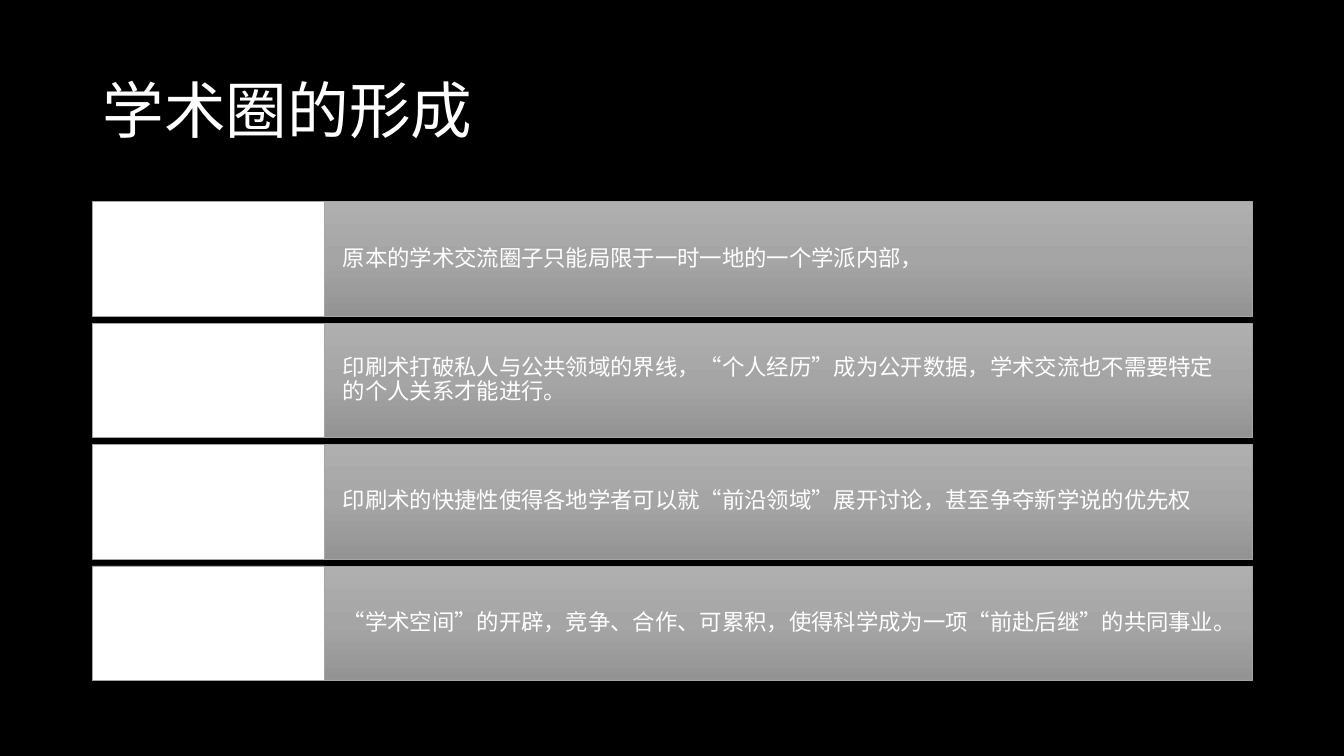
from copy import deepcopy

from lxml.etree import SubElement
from pptx import Presentation
from pptx.dml.color import RGBColor
from pptx.enum.shapes import MSO_SHAPE
from pptx.enum.text import MSO_ANCHOR, PP_ALIGN
from pptx.oxml.ns import qn
from pptx.util import Inches, Pt

COLORS = {
    "background": "000000",
    "text": "FFFFFF",
    "label": "FFFFFF",
    "outline": "A5A5A5",
    "panel_top": "AFAFAF",
    "panel_middle": "A5A5A5",
    "panel_bottom": "939393",
}
FONT = "Noto Sans CJK SC"
TITLE = "学术圈的形成"
STAGES = [
    "原本的学术交流圈子只能局限于一时一地的一个学派内部，",
    "印刷术打破私人与公共领域的界线，“个人经历”成为公开数据，学术交流也不需要特定的个人关系才能进行。",
    "印刷术的快捷性使得各地学者可以就“前沿领域”展开讨论，甚至争夺新学说的优先权",
    "“学术空间”的开辟，竞争、合作、可累积，使得科学成为一项“前赴后继”的共同事业。",
]


def color(name):
    """Return the palette colour of the given name."""
    return RGBColor.from_string(COLORS[name])


def write_text(frame, text, size, inset_x, inset_y):
    """Fill a text frame with one left-aligned, vertically centred paragraph."""
    frame.word_wrap = True
    frame.vertical_anchor = MSO_ANCHOR.MIDDLE
    frame.margin_left = frame.margin_right = Inches(inset_x)
    frame.margin_top = frame.margin_bottom = Inches(inset_y)
    paragraph = frame.paragraphs[0]
    paragraph.text = text
    paragraph.alignment = PP_ALIGN.LEFT
    paragraph.line_spacing = 0.9
    font = paragraph.font
    font.size = Pt(size)
    font.color.rgb = color("text")
    font.name = FONT
    defaults = paragraph._p.pPr.find(qn("a:defRPr"))
    SubElement(defaults, qn("a:ea"), typeface=FONT)


def add_title(slide, left, top, width, height):
    """Place the slide title in the given box."""
    title = slide.shapes.add_textbox(
        Inches(left), Inches(top), Inches(width), Inches(height)
    )
    write_text(title.text_frame, TITLE, 44, 0.1, 0.05)


def add_block(slide, left, top, width, height):
    """Add a thinly outlined rectangle without shadow."""
    block = slide.shapes.add_shape(
        MSO_SHAPE.RECTANGLE, Inches(left), Inches(top), Inches(width), Inches(height)
    )
    block.shadow.inherit = False
    block.line.color.rgb = color("outline")
    block.line.width = Pt(0.5)
    return block


def shade_panel(fill):
    """Apply the three-stop vertical grey gradient."""
    fill.gradient()
    fill.gradient_angle = 270
    first_stop = fill.gradient_stops[0]._gs
    first_stop.addnext(deepcopy(first_stop))
    shades = ("panel_top", "panel_middle", "panel_bottom")
    for position, (stop, shade) in enumerate(zip(fill.gradient_stops, shades)):
        stop.position = position / 2
        stop.color.rgb = color(shade)


def add_stages(slide, left, top, width, height, gap=0.07):
    """Stack one row per stage: a blank label block and a text panel."""
    row_height = (height - gap * (len(STAGES) - 1)) / len(STAGES)
    label_width = width * 0.2
    for index, stage in enumerate(STAGES):
        row_top = top + index * (row_height + gap)
        panel = add_block(
            slide, left + label_width, row_top, width - label_width, row_height
        )
        shade_panel(panel.fill)
        write_text(panel.text_frame, stage, 16, 0.18, 0.29)
        label = add_block(slide, left, row_top, label_width, row_height)
        label.fill.solid()
        label.fill.fore_color.rgb = color("label")


def main():
    """Build and save the slide."""
    presentation = Presentation()
    presentation.slide_width = Inches(13.33)
    presentation.slide_height = Inches(7.5)
    slide = presentation.slides.add_slide(presentation.slide_layouts[6])
    slide.background.fill.solid()
    slide.background.fill.fore_color.rgb = color("background")
    add_title(slide, 0.92, 0.4, 11.5, 1.45)
    add_stages(slide, 0.92, 2, 11.5, 4.75)
    presentation.save("out.pptx")


if __name__ == "__main__":
    main()
